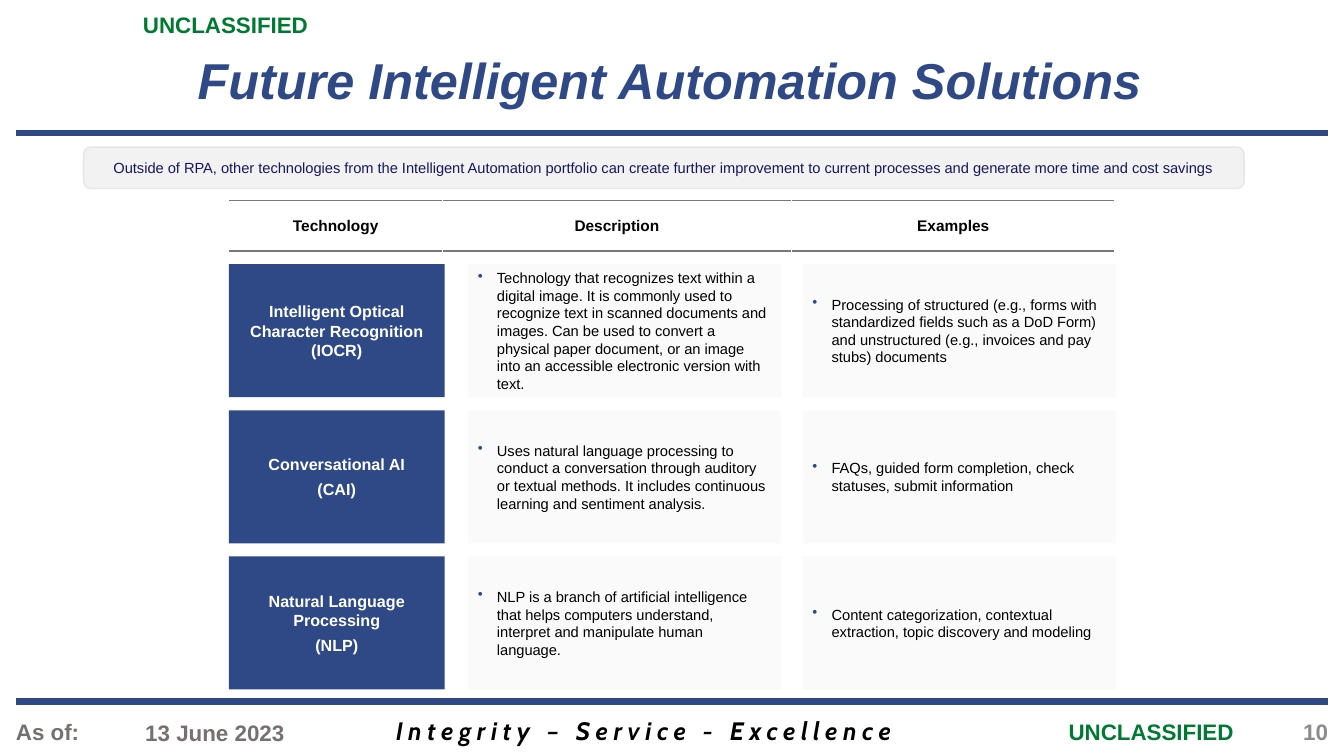
from dataclasses import dataclass

from lxml import etree
from pptx import Presentation
from pptx.dml import color as col
from pptx.enum import shapes as sh, text as tx
from pptx.oxml import ns
from pptx.util import Inches, Pt


@dataclass(frozen=True)
class Theme:
    navy: str = "2E4986"
    ink: str = "17175C"
    green: str = "007A33"
    gray: str = "767171"
    pale: str = "8C8C8C"
    rule: str = "75787B"
    card: str = "FAFAFA"
    band: str = "F2F2F2"
    edge: str = "E7E6E6"
    black: str = "000000"
    white: str = "FFFFFF"
    font: str = "Arial"
    motto: str = "Cabin"
    head: float = 36
    foot: float = 16
    slogan: float = 18
    name: float = 11.5
    label: float = 11
    body: float = 10.5


T = Theme()
rgb = col.RGBColor.from_string
LEFT, MID, RIGHT = tx.PP_ALIGN.LEFT, tx.PP_ALIGN.CENTER, tx.PP_ALIGN.RIGHT


def write(frame, lines, size=T.body, color=T.black, font=T.font, bold=False,
          italic=False, align=LEFT, gap=0, bullet=False, track=0,
          inset=(0.1, 0.05), wrap=True):
    """Fill a text frame with one paragraph per line."""
    frame.word_wrap = wrap
    frame.auto_size = tx.MSO_AUTO_SIZE.NONE
    frame.vertical_anchor = tx.MSO_ANCHOR.MIDDLE
    frame.margin_left = frame.margin_right = Inches(inset[0])
    frame.margin_top = frame.margin_bottom = Inches(inset[1])
    for i, line in enumerate(lines):
        para = frame.add_paragraph() if i else frame.paragraphs[0]
        para.alignment = align
        if i:
            para.space_before = Pt(gap)
        if bullet:
            props = para._p.get_or_add_pPr()
            props.set("marL", str(Inches(0.19)))
            props.set("indent", str(-Inches(0.19)))
            tint = etree.SubElement(props, ns.qn("a:buClr"))
            etree.SubElement(tint, ns.qn("a:srgbClr"), val=T.navy)
            etree.SubElement(props, ns.qn("a:buChar"), char="•")
            para.space_after = Pt(2)
        run = para.add_run()
        run.text = line
        run.font.name, run.font.size = font, Pt(size)
        run.font.bold, run.font.italic = bold, italic
        run.font.color.rgb = rgb(color)
        if track:
            run._r.get_or_add_rPr().set("spc", str(track * 100))


def block(kind, x, y, w, h, fill, edge=None):
    """Add a flat filled shape and return it."""
    item = slide.shapes.add_shape(kind, Inches(x), Inches(y), Inches(w), Inches(h))
    item.shadow.inherit = False
    item.fill.solid()
    item.fill.fore_color.rgb = rgb(fill)
    if edge:
        item.line.color.rgb = rgb(edge)
        item.line.width = Pt(1)
    else:
        item.line.fill.background()
    return item


deck = Presentation()
deck.slide_width, deck.slide_height = Inches(13.33), Inches(7.5)
slide = deck.slides.add_slide(deck.slide_layouts[5])

# Title
title = slide.shapes.title
title.left, title.top = Inches(1.32), Inches(0.44)
title.width, title.height = Inches(10.65), Inches(0.77)
write(title.text_frame, ["Future Intelligent Automation Solutions"], size=T.head,
      color=T.navy, bold=True, italic=True, align=MID, inset=(0.1, 0))
title.text_frame.paragraphs[0].line_spacing = 0.9

# Rules under the title and above the footer
for y in (1.32, 6.96):
    rule = slide.shapes.add_connector(sh.MSO_CONNECTOR.STRAIGHT, Inches(0.16),
                                      Inches(y), Inches(13.17), Inches(y))
    rule.line.color.rgb = rgb(T.navy)
    rule.line.width = Pt(4.5)
    etree.SubElement(rule._element.spPr, ns.qn("a:effectLst"))

# Markings and footer
mark = dict(size=T.foot, color=T.green)
note = dict(size=T.foot, color=T.gray)
for x, y, w, h, words, look in (
    (1.32, 0.11, 1.86, 0.27, "UNCLASSIFIED", mark),
    (10.5, 7.12, 1.86, 0.27, "UNCLASSIFIED", mark),
    (0.06, 7.12, 0.9, 0.27, "As of:", note),
    (0.76, 7.14, 2.16, 0.26, "13 June 2023", dict(note, align=RIGHT)),
    (12.69, 7.12, 0.58, 0.27, "10", dict(size=T.foot, color=T.pale, align=RIGHT)),
    (3.76, 7.1, 5.25, 0.3, "Integrity – Service - Excellence",
     dict(size=T.slogan, font=T.motto, italic=True, align=MID, track=4)),
):
    box = slide.shapes.add_textbox(Inches(x), Inches(y), Inches(w), Inches(h))
    write(box.text_frame, [words], bold=True, inset=(0.1, 0), wrap=False, **look)

# Summary band
band = block(sh.MSO_SHAPE.ROUNDED_RECTANGLE, 0.83, 1.46, 11.51, 0.41, T.band, T.edge)
write(band.text_frame, [
    "Outside of RPA, other technologies from the Intelligent Automation portfolio can "
    "create further improvement to current processes and generate more time and cost "
    "savings"], color=T.ink, align=MID)

# Column headings
table = slide.shapes.add_table(1, 3, Inches(2.27), Inches(1.99),
                               Inches(8.79), Inches(0.5)).table
table.first_row = table.horz_banding = False
heads = (("Technology", 2.12), ("Description", 3.46), ("Examples", 3.21))
for i, (head, width) in enumerate(heads):
    table.columns[i].width = Inches(width)
    cell = table.cell(0, i)
    write(cell.text_frame, [head], size=T.label, bold=True, align=MID)
    cell.vertical_anchor = tx.MSO_ANCHOR.MIDDLE
    cell.margin_left = cell.margin_right = Inches(0.07)
    cell.margin_top = cell.margin_bottom = Inches(0.04)
    props = cell._tc.get_or_add_tcPr()
    for side in ("a:lnT", "a:lnB"):
        line = etree.SubElement(props, ns.qn(side), w=str(Pt(1)))
        fill = etree.SubElement(line, ns.qn("a:solidFill"))
        etree.SubElement(fill, ns.qn("a:srgbClr"), val=T.rule)
    cell.fill.background()

# Technology rows
rows = (
    (["Intelligent Optical Character Recognition (IOCR)"],
     "Technology that recognizes text within a digital image. It is commonly used to "
     "recognize text in scanned documents and images. Can be used to convert a physical "
     "paper document, or an image into an accessible electronic version with text.",
     "Processing of structured (e.g., forms with standardized fields such as a DoD Form) "
     "and unstructured (e.g., invoices and pay stubs) documents"),
    (["Conversational AI", "(CAI)"],
     "Uses natural language processing to conduct a conversation through auditory or "
     "textual methods. It includes continuous learning and sentiment analysis.",
     "FAQs, guided form completion, check statuses, submit information"),
    (["Natural Language Processing", "(NLP)"],
     "NLP is a branch of artificial intelligence that helps computers understand, "
     "interpret and manipulate human language.",
     "Content categorization, contextual extraction, topic discovery and modeling"),
)
for i, (name, about, cases) in enumerate(rows):
    y = 2.62 + 1.45 * i
    tile = block(sh.MSO_SHAPE.RECTANGLE, 2.27, y, 2.14, 1.32, T.navy)
    write(tile.text_frame, name, size=T.name, color=T.white, bold=True, align=MID,
          gap=4, inset=(0.1, 0.1))
    for x, words in ((4.64, about), (7.96, cases)):
        card = block(sh.MSO_SHAPE.RECTANGLE, x, y, 3.11, 1.32, T.card)
        write(card.text_frame, [words], bullet=True)

deck.save("out.pptx")
